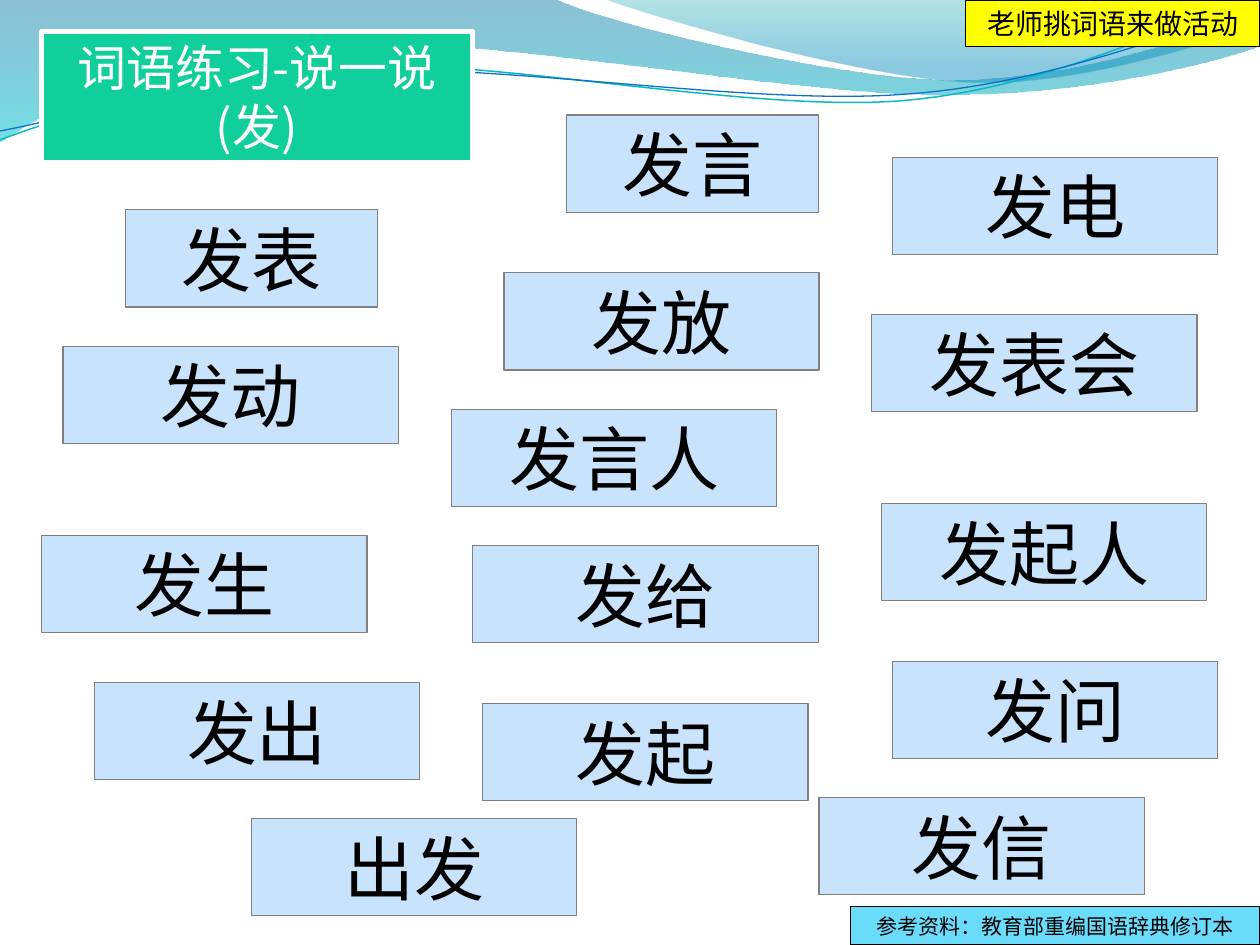
"""Build a Chinese vocabulary speaking-practice slide with word cards."""
import lxml.etree
import pptx
import pptx.dml.color
import pptx.enum.shapes
import pptx.enum.text
import pptx.oxml.ns
import pptx.util

Cm = pptx.util.Cm
qn = pptx.oxml.ns.qn

THEME = {
    "font": "Noto Sans CJK SC",
    "black": "000000", "white": "FFFFFF",
    "card": "C8E3FB", "card_line": "808080",
    "title": "10CF9B", "note": "FFFF00", "source": "6BDBFA",
    "word_size": 40, "title_size": 28, "note_size": 16, "source_size": 12,
    "thin": 0.75, "thick": 3,
}
PAGE = (25.4, 19.05)
CARD_HEIGHT = 1.96

TITLE = ("词语练习-说一说(发)", (0.84, 0.63, 8.68, 2.64))
WORDS = [
    ("发放", 10.16, 5.5, 6.35), ("发生", 0.84, 10.79, 6.56),
    ("发表", 2.53, 4.23, 5.08), ("发动", 1.27, 6.98, 6.77),
    ("发给", 9.52, 11, 6.98), ("发出", 1.9, 13.76, 6.56),
    ("发信", 16.51, 16.08, 6.56), ("出发", 5.07, 16.5, 6.56),
    ("发言", 11.42, 2.32, 5.08), ("发电", 17.99, 3.17, 6.56),
    ("发起", 9.73, 14.18, 6.56), ("发言人", 9.1, 8.25, 6.56),
    ("发起人", 17.77, 10.15, 6.56), ("发表会", 17.57, 6.34, 6.56),
    ("发问", 17.99, 13.33, 6.56),
]
LABELS = [
    ("参考资料：教育部重编国语辞典修订本", (17.15, 18.28, 8.25, 0.77), "source"),
    ("老师挑词语来做活动", (19.47, 0, 5.93, 0.94), "note"),
]
WAVES = [
    {"segments": [
        [(0, 0)], [(11.18, -0.03)],
        [(12.09, 0.43), (16.87, 1.6), (19.25, 1.6)],
        [(21.67, 1.6), (24.33, 0.66), (25.4, 0.23)], [(25.43, 0.91)],
        [(24.97, 1.12), (22.1, 1.93), (18.95, 1.91)],
        [(15.8, 1.91), (9.7, 0.71), (6.53, 0.86)],
        [(3.28, 0.91), (1.17, 2.11), (-0.03, 2.87)], [(0, 0)]],
     "stops": [(0, "0074A1", 45), (1, "00C6CF", 55)]},
    {"segments": [
        [(12.17, -0.03)],
        [(12.93, 0.28), (17.32, 1.57), (19.53, 1.65)],
        [(21.74, 1.75), (24.41, 0.81), (25.4, 0.53)],
        [(25.4, 0)], [(12.17, -0.03)]],
     "stops": [(0, "00A1A9", 30), (0.8, "008BBF", 45)]},
    {"segments": [
        [(-0.05, 2.22)],
        [(1.19, 1.82), (4.02, 1.04), (7.05, 1.05)],
        [(10.05, 1.07), (15.02, 2.37), (18.08, 2.29)],
        [(21.13, 2.2), (23.86, 0.91), (25.41, 0.55)]],
     "line": ("0AB8BF", 0.85), "rotation": 357.3},
    {"segments": [
        [(-0.04, 2.04)],
        [(1.16, 1.89), (4.17, 1.15), (7.2, 1.16)],
        [(10.25, 1.18), (15.13, 2.25), (18.19, 2.16)],
        [(21.22, 2.1), (23.93, 1.06), (25.45, 0.75)]],
     "line": ("0F6FC6", 0.75), "rotation": 357.3},
]


def rgb(value):
    return pptx.dml.color.RGBColor.from_string(value)


def set_line(shape, color, width):
    shape.line.color.rgb = rgb(color)
    shape.line.width = pptx.util.Pt(width)


def write_text(shape, text, *, size, color):
    frame = shape.text_frame
    frame.word_wrap = True
    frame.auto_size = pptx.enum.text.MSO_AUTO_SIZE.NONE
    frame.vertical_anchor = pptx.enum.text.MSO_ANCHOR.MIDDLE
    para = frame.paragraphs[0]
    para.alignment = pptx.enum.text.PP_ALIGN.CENTER
    span = para.add_run()
    span.text = text
    span.font.size = pptx.util.Pt(size)
    span.font.name = THEME["font"]
    span.font.color.rgb = rgb(color)
    lxml.etree.SubElement(span.font._element, qn("a:ea"), typeface=THEME["font"])


def add_box(page, text, place, *, fill, line, size):
    box = page.shapes.add_shape(
        pptx.enum.shapes.MSO_SHAPE.RECTANGLE, *(Cm(length) for length in place))
    box.shadow.inherit = False
    box.fill.solid()
    box.fill.fore_color.rgb = rgb(fill)
    set_line(box, line, THEME["thin"])
    write_text(box, text, size=size, color=THEME["black"])


def bend_segments(wave, segments):
    edges = list(wave._element.iter(qn("a:lnTo")))
    for edge, segment in zip(edges, segments[1:]):
        if len(segment) == 1:
            continue
        curve = lxml.etree.Element(qn("a:cubicBezTo"))
        for x, y in segment:
            lxml.etree.SubElement(curve, qn("a:pt"), x=str(Cm(x) - wave.left),
                                  y=str(Cm(y) - wave.top))
        edge.getparent().replace(edge, curve)


def add_wave(page, segments, stops=None, line=None, rotation=0):
    start, *ends = [(Cm(segment[-1][0]), Cm(segment[-1][1])) for segment in segments]
    builder = page.shapes.build_freeform(*start)
    builder.add_line_segments(ends, close=bool(stops))
    wave = builder.convert_to_shape()
    bend_segments(wave, segments)
    wave.rotation = rotation
    wave.shadow.inherit = False
    if line:
        wave.fill.background()
        set_line(wave, *line)
        return
    wave.line.fill.background()
    wave.fill.gradient()
    wave.fill.gradient_angle = 270
    for stop, (position, color, _) in zip(wave.fill.gradient_stops, stops):
        stop.position = position
        stop.color.rgb = rgb(color)
    for node, (_, _, opacity) in zip(wave._element.iter(qn("a:srgbClr")), stops):
        lxml.etree.SubElement(node, qn("a:alpha"), val=str(opacity * 1000))


def format_title(page):
    text, place = TITLE
    title = page.shapes.title
    title.left, title.top, title.width, title.height = (Cm(length) for length in place)
    title.fill.solid()
    title.fill.fore_color.rgb = rgb(THEME["title"])
    set_line(title, THEME["white"], THEME["thick"])
    write_text(title, text, size=THEME["title_size"], color=THEME["white"])
    page.shapes._spTree.append(title._element)


def main():
    deck = pptx.Presentation()
    deck.slide_width, deck.slide_height = (Cm(length) for length in PAGE)
    page = deck.slides.add_slide(deck.slide_layouts[5])
    for wave in WAVES:
        add_wave(page, **wave)
    format_title(page)
    for word, left, top, width in WORDS:
        add_box(page, word, (left, top, width, CARD_HEIGHT), fill=THEME["card"],
                line=THEME["card_line"], size=THEME["word_size"])
    for text, place, kind in LABELS:
        add_box(page, text, place, fill=THEME[kind], line=THEME["black"],
                size=THEME[f"{kind}_size"])
    deck.save("out.pptx")


if __name__ == "__main__":
    main()
